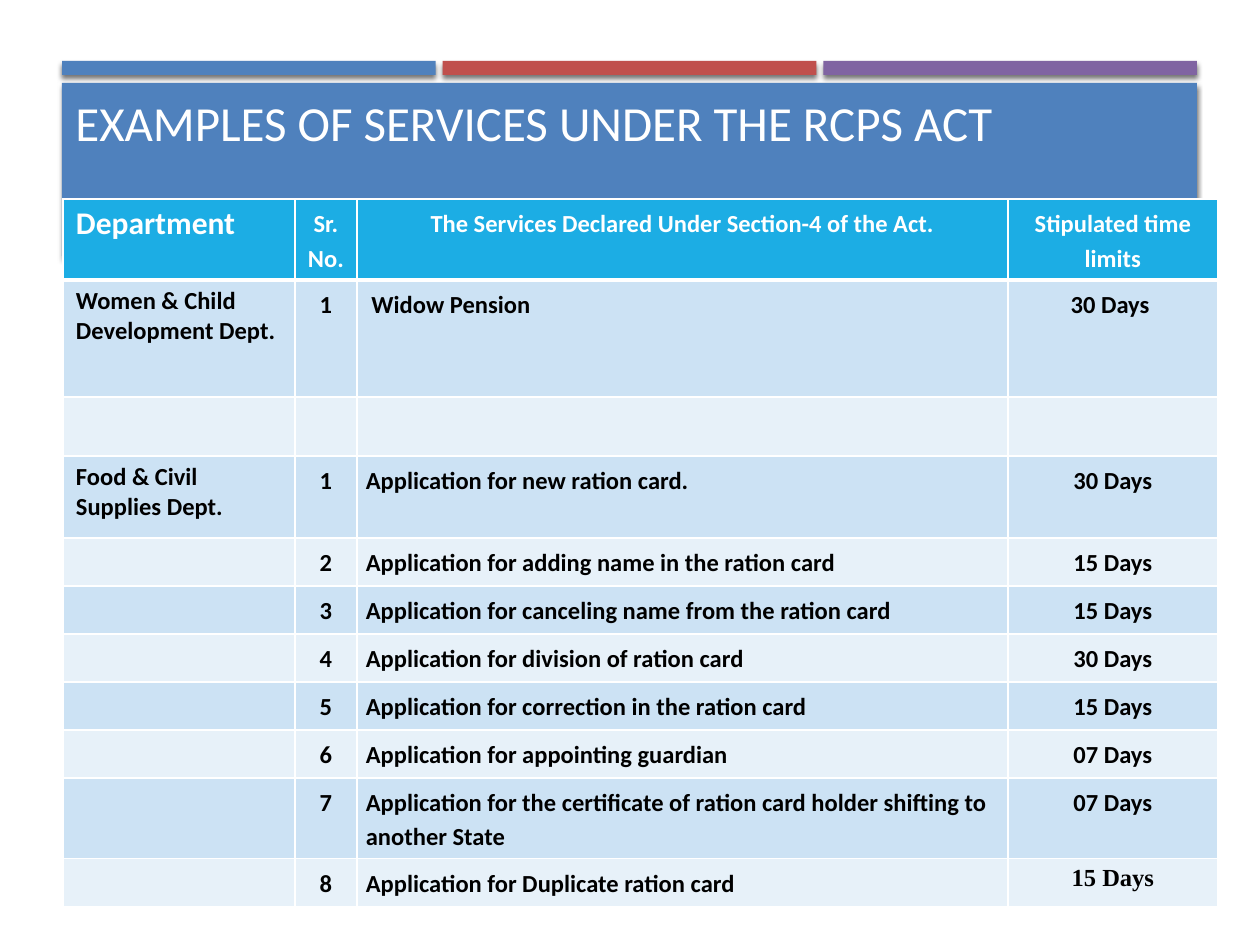
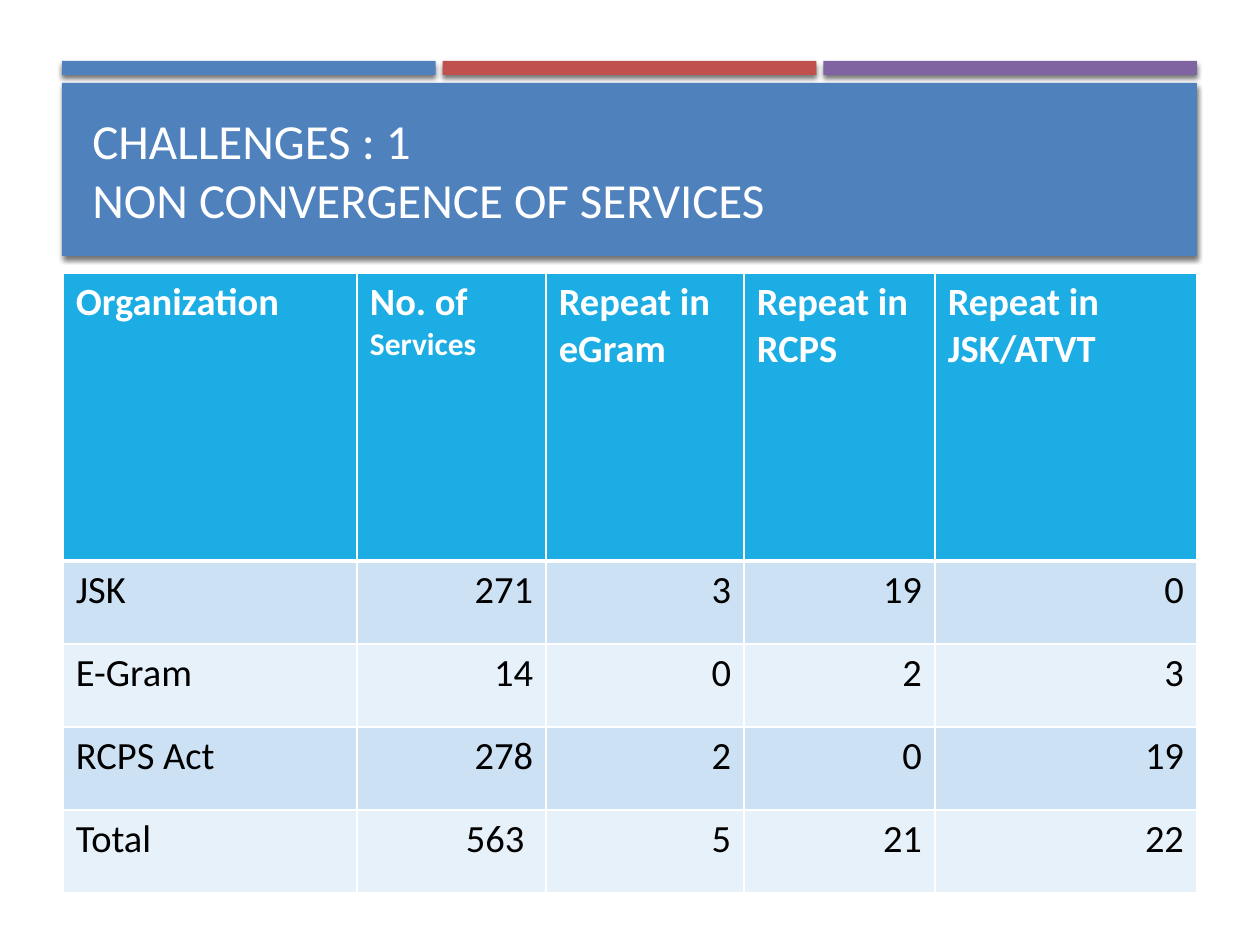
from dataclasses import dataclass
from typing import Optional, Union

from lxml.etree import SubElement
from pptx import Presentation
from pptx.dml.color import RGBColor as Rgb
from pptx.enum.shapes import MSO_SHAPE as Preset
from pptx.enum.text import MSO_ANCHOR as Anchor, PP_ALIGN as Align
from pptx.oxml.ns import qn
from pptx.util import Emu, Pt

EMU_PER_PX = 914400 / 126
BODY_FONT = "Calibri"
COLOURS = {
    "blue": "4F81BD", "red": "C0504D", "purple": "8064A2",
    "header": "1CADE4", "odd": "CCE2F4", "even": "E7F1F9",
    "white": "FFFFFF", "black": "000000",
}
THIN, THICK = 0.96, 3
BAND_LEFT, BAND_WIDTH, STRIPE_GAP = 62, 1135, 7
TABLE_LEFT = 63
WIDE_INSET, NARROW_INSET, VERTICAL_INSET = 13, 9, 6


@dataclass(frozen=True)
class Words:
    text: str
    size: Optional[int] = None
    font: str = BODY_FONT


@dataclass(frozen=True)
class Cell:
    paragraphs: list[list[Words]]
    spacing: Optional[float] = None


@dataclass(frozen=True)
class Column:
    width: int
    head_align: Align = Align.LEFT
    body_align: Align = Align.LEFT
    inset: int = WIDE_INSET
    spacing: float = 1.0


@dataclass(frozen=True)
class Grid:
    top: int
    columns: list[Column]
    heights: list[int]
    rows: list[list[Union[str, Cell]]]
    size: int
    bold_body: bool


@dataclass(frozen=True)
class Title:
    lines: list[str]
    left: int
    top: int
    height: int
    anchor: Anchor


def px(length: float) -> Emu:
    return Emu(round(length * EMU_PER_PX))


def colour(name: str) -> Rgb:
    return Rgb.from_string(COLOURS[name])


def add_run(paragraph, words: Words, size: int, ink: str, bold: bool) -> None:
    run = paragraph.add_run()
    run.text = words.text
    run.font.name = words.font
    run.font.size = Pt(words.size or size)
    run.font.bold = bold
    run.font.color.rgb = colour(ink)


# Shared header: three stripes above a title band
def add_bar(slide, left: float, top: int, width: float, height: int, fill: str) -> None:
    bar = slide.shapes.add_shape(Preset.RECTANGLE, px(left), px(top), px(width), px(height))
    bar.fill.solid()
    bar.fill.fore_color.rgb = colour(fill)
    bar.line.fill.background()
    bar.shadow.inherit = False
    effects = bar._element.spPr.find(qn("a:effectLst"))
    shade = SubElement(effects, qn("a:outerShdw"), blurRad=str(Pt(3)), dist=str(Pt(2)),
                       dir="5400000", rotWithShape="0")
    black = SubElement(shade, qn("a:srgbClr"), val=COLOURS["black"])
    SubElement(black, qn("a:alpha"), val="55000")


def add_header(slide, title: Title) -> None:
    stripes = ("blue", "red", "purple")
    width = (BAND_WIDTH - STRIPE_GAP * (len(stripes) - 1)) / len(stripes)
    for index, fill in enumerate(stripes):
        add_bar(slide, BAND_LEFT + index * (width + STRIPE_GAP), 61, width, 14, fill)
    add_bar(slide, BAND_LEFT, 83, BAND_WIDTH, 173, "blue")

    heading = slide.shapes.add_textbox(px(title.left), px(title.top), px(1100), px(title.height))
    frame = heading.text_frame
    frame.word_wrap = True
    frame.vertical_anchor = title.anchor
    for index, line in enumerate(title.lines):
        paragraph = frame.paragraphs[0] if index == 0 else frame.add_paragraph()
        add_run(paragraph, Words(line), 28, "white", False)


# Tables
def set_borders(cell, top: float, bottom: float) -> None:
    properties = cell._tc.get_or_add_tcPr()
    for side, weight in (("L", THIN), ("R", THIN), ("T", top), ("B", bottom)):
        edge = SubElement(properties, qn(f"a:ln{side}"), w=str(Pt(weight)))
        paint = SubElement(edge, qn("a:solidFill"))
        SubElement(paint, qn("a:srgbClr"), val=COLOURS["white"])


def fill_cell(cell, content: Union[str, Cell], column: Column, row: int, grid: Grid) -> None:
    is_head = row == 0
    set_borders(cell, THICK if row == 1 else THIN, THICK if is_head else THIN)
    cell.fill.solid()
    cell.fill.fore_color.rgb = colour("header" if is_head else "odd" if row % 2 else "even")
    cell.margin_left = cell.margin_right = px(column.inset)
    cell.margin_top = cell.margin_bottom = px(VERTICAL_INSET)

    if not content:
        end = SubElement(cell.text_frame.paragraphs[0]._p, qn("a:endParaRPr"))
        end.set("sz", str(grid.size * 100))
        return
    if isinstance(content, str):
        content = Cell([[Words(line)] for line in content.split("\n")])
    for index, line in enumerate(content.paragraphs):
        frame = cell.text_frame
        paragraph = frame.paragraphs[0] if index == 0 else frame.add_paragraph()
        paragraph.alignment = column.head_align if is_head else column.body_align
        paragraph.line_spacing = content.spacing or column.spacing
        for words in line:
            add_run(paragraph, words, grid.size, "white" if is_head else "black",
                    is_head or grid.bold_body)


def add_grid(slide, grid: Grid) -> None:
    width = sum(column.width for column in grid.columns)
    table = slide.shapes.add_table(len(grid.rows), len(grid.columns), px(TABLE_LEFT),
                                   px(grid.top), px(width), px(sum(grid.heights))).table
    table.horz_banding = False
    for index, column in enumerate(grid.columns):
        table.columns[index].width = px(column.width)
    for row, (height, contents) in enumerate(zip(grid.heights, grid.rows)):
        table.rows[row].height = px(height)
        for index, (content, column) in enumerate(zip(contents, grid.columns)):
            fill_cell(table.cell(row, index), content, column, row, grid)


# Content
SERVICES_TITLE = Title(["EXAMPLES OF SERVICES UNDER THE RCPS ACT"], 63, 32, 126, Anchor.BOTTOM)
SERVICES = Grid(
    top=199,
    columns=[
        Column(232),
        Column(62, Align.CENTER, Align.CENTER, NARROW_INSET, 1.15),
        Column(651, Align.CENTER, Align.LEFT, NARROW_INSET, 1.15),
        Column(210, Align.CENTER, Align.CENTER, NARROW_INSET, 1.15),
    ],
    heights=[81, 117, 59, 82] + [48] * 5 + [81, 48],
    rows=[
        [Cell([[Words("Department", 18)]]), "Sr.\nNo.",
         "The Services Declared Under Section-4 of the Act.", "Stipulated time limits"],
        ["Women & Child Development Dept.", "1", " Widow Pension", "30 Days "],
        ["", "", "", ""],
        ["Food & Civil Supplies Dept.", "1", "Application for new ration card.", "30 Days"],
        ["", "2", "Application for adding name in the ration card", "15 Days"],
        ["", "3", "Application for canceling name from the ration card", "15 Days"],
        ["", "4", "Application for division of ration card", "30 Days"],
        ["", "5", "Application for correction in the ration card", "15 Days"],
        ["", "6", "Application for appointing guardian", "07 Days"],
        ["", "7", "Application for the certificate of ration card holder shifting to another State",
         "07 Days"],
        ["", "8", "Application for Duplicate ration card",
         Cell([[Words("15 Days", font="Times New Roman")]], spacing=1.0)],
    ],
    size=14,
    bold_body=True,
)

CHALLENGES_TITLE = Title(["CHALLENGES : 1", "NON CONVERGENCE OF SERVICES"],
                         80, 95, 149, Anchor.MIDDLE)
CHALLENGES = Grid(
    top=273,
    columns=[Column(294)] + [Column(width, body_align=Align.RIGHT)
                             for width in (189, 198, 191, 262)],
    heights=[288] + [83] * 4,
    rows=[
        ["Organization", Cell([[Words("No. of "), Words("Services", 18)]]),
         "Repeat in eGram", "Repeat in\nRCPS", "Repeat in JSK/ATVT"],
        ["JSK", "271", "3", "19", "0"],
        ["E-Gram", "14", "0", "2", "3"],
        ["RCPS Act", "278", "2", "0", "19"],
        ["Total", "563 ", "5", "21", "22"],
    ],
    size=22,
    bold_body=False,
)


def main() -> None:
    deck = Presentation()
    deck.slide_width, deck.slide_height = px(1260), px(945)
    blank = deck.slide_layouts[6]
    for title, grid in ((SERVICES_TITLE, SERVICES), (CHALLENGES_TITLE, CHALLENGES)):
        slide = deck.slides.add_slide(blank)
        add_header(slide, title)
        add_grid(slide, grid)
    deck.save("out.pptx")


if __name__ == "__main__":
    main()
